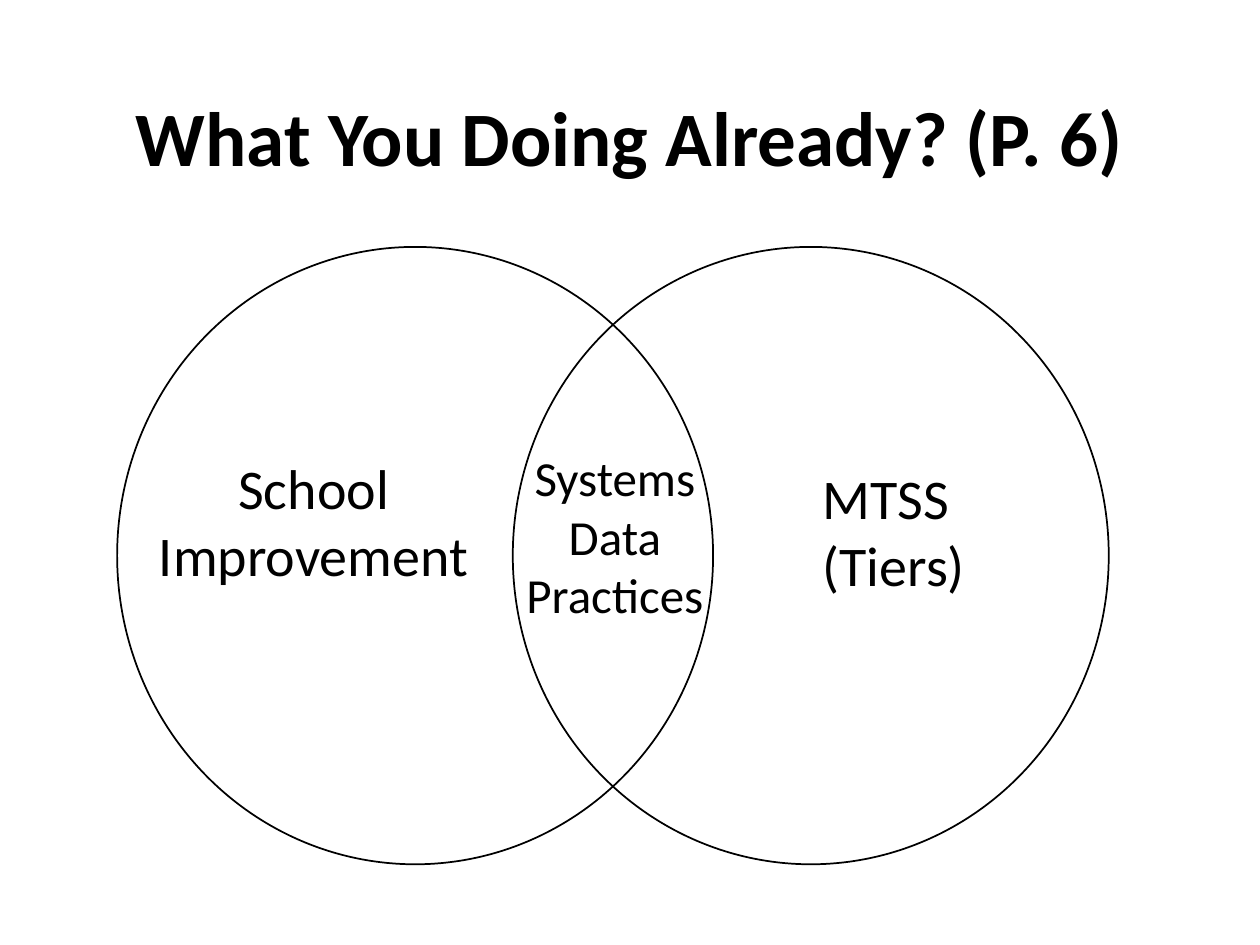
from pptx import Presentation
from pptx.dml.color import RGBColor
from pptx.enum.shapes import MSO_SHAPE
from pptx.enum.text import MSO_ANCHOR, PP_ALIGN
from pptx.util import Inches, Pt

OVAL = MSO_SHAPE.OVAL
LEFT, CENTER = PP_ALIGN.LEFT, PP_ALIGN.CENTER
TOP, MIDDLE = MSO_ANCHOR.TOP, MSO_ANCHOR.MIDDLE


def color(hex_code):
    return RGBColor.from_string(hex_code)


class VennSlide:
    """Holds the style and the slide being drawn."""

    font_name = "Calibri"
    ink = "000000"
    line_width = 1

    def __init__(self, slide):
        self.slide = slide

    def circle(self, left, top, width, height):
        oval = self.slide.shapes.add_shape(
            OVAL, Inches(left), Inches(top), Inches(width), Inches(height))
        oval.shadow.inherit = False
        oval.fill.background()
        oval.line.color.rgb = color(self.ink)
        oval.line.width = Pt(self.line_width)

    def text(self, lines, box, size, align=CENTER, anchor=TOP,
             wrap=False, bold=False, spacing=1.0):
        """Place one paragraph per line in a box of left, top, width, height."""
        frame = self.slide.shapes.add_textbox(*map(Inches, box)).text_frame
        frame.word_wrap = wrap
        frame.vertical_anchor = anchor
        frame.text = "\n".join(lines)
        font_format = {"name": self.font_name, "size": Pt(size), "bold": bold}
        for paragraph in frame.paragraphs:
            paragraph.alignment = align
            paragraph.line_spacing = spacing
            for run in paragraph.runs:
                for attribute, value in font_format.items():
                    setattr(run.font, attribute, value)
                run.font.color.rgb = color(self.ink)


def main():
    presentation = Presentation()
    presentation.slide_width = Inches(10)
    presentation.slide_height = Inches(7.5)
    venn = VennSlide(presentation.slides.add_slide(presentation.slide_layouts[6]))

    venn.text(["What You Doing Already? (P. 6)"], (0.69, 0.4, 8.62, 1.45), 44,
              anchor=MIDDLE, wrap=True, bold=True, spacing=0.9)
    for circle_left in (0.93, 4.07):
        venn.circle(circle_left, 1.96, 4.73, 4.9)
    venn.text(["School ", "Improvement "], (1.15, 3.55, 2.78, 1.18), 32)
    venn.text(["MTSS", "(Tiers)"], (6.43, 3.63, 1.34, 1.18), 32, align=LEFT)
    venn.text(["Systems", "Data", "Practices"], (4.07, 3.5, 1.62, 1.51), 28)

    presentation.save("out.pptx")


if __name__ == "__main__":
    main()
